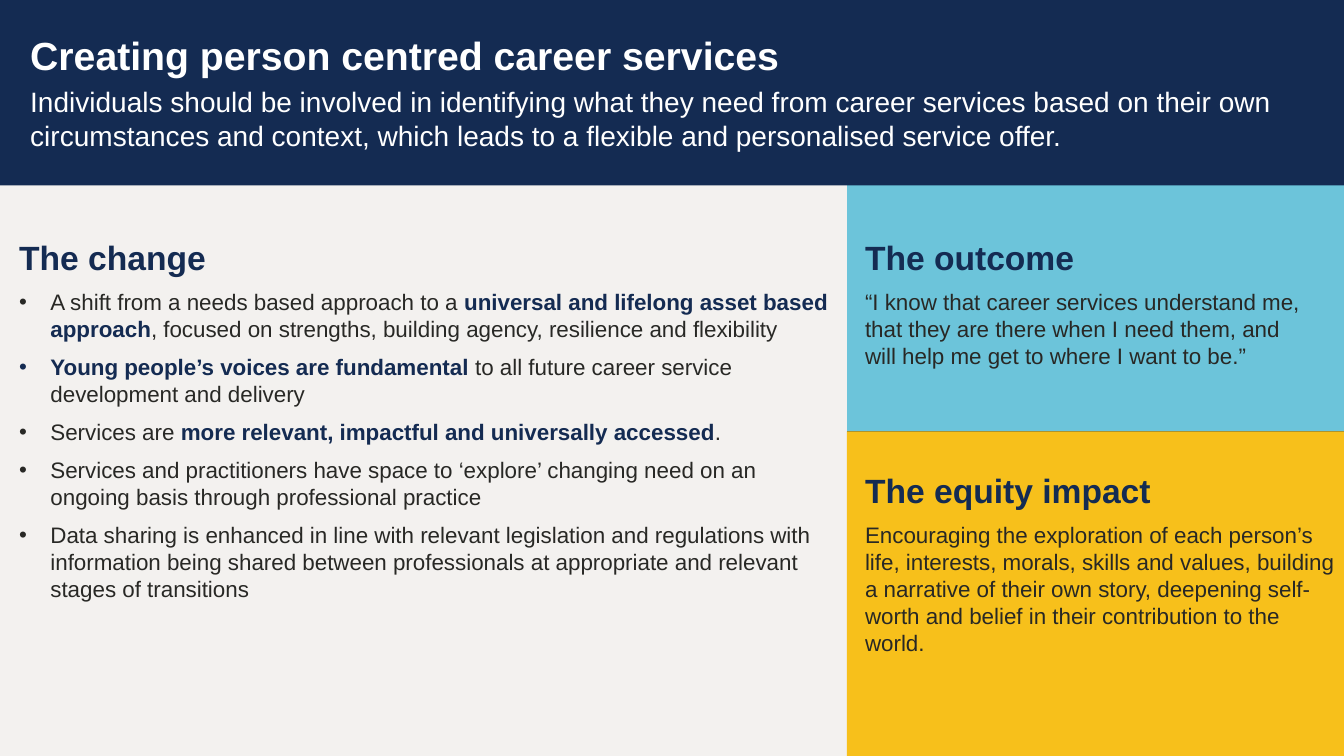
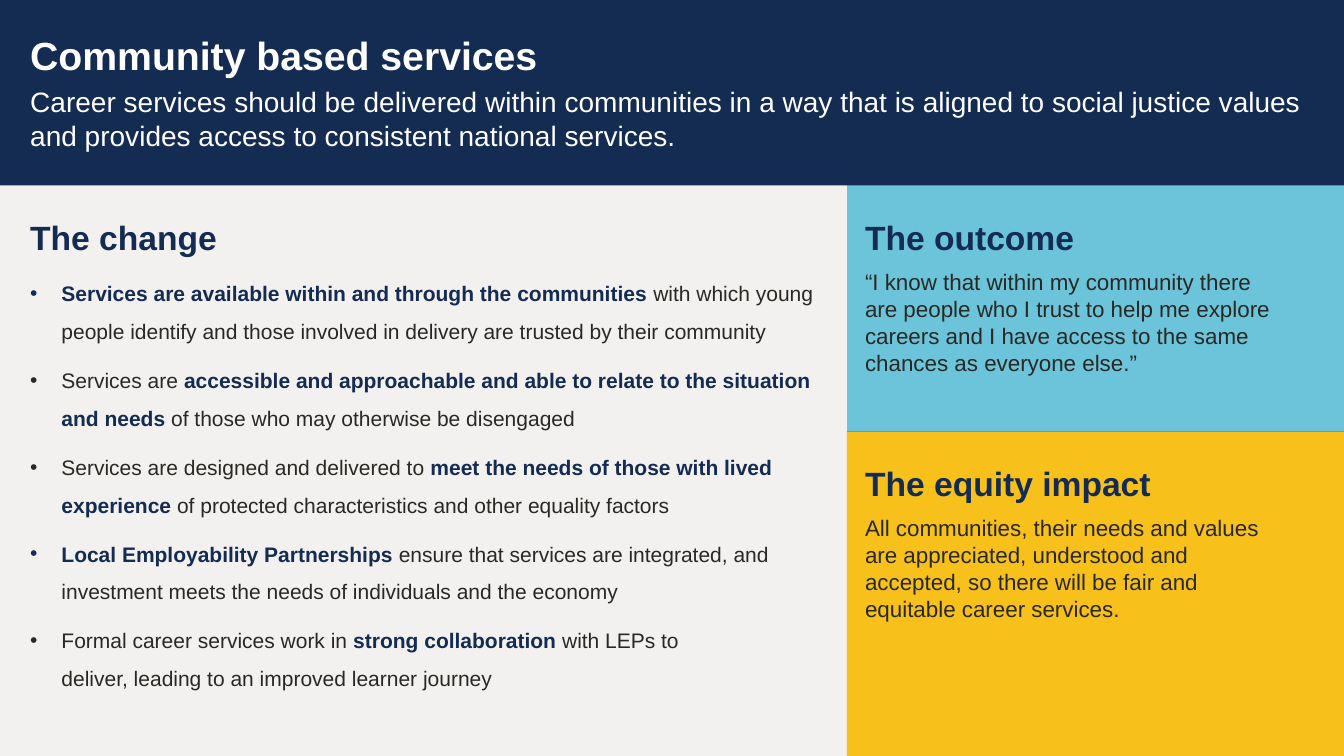
from lxml.etree import SubElement
from pptx import Presentation
from pptx.dml.color import RGBColor
from pptx.enum.shapes import MSO_SHAPE
from pptx.oxml.ns import qn
from pptx.util import Inches, Pt

NAVY = RGBColor(0x14, 0x2B, 0x52)
SKY = RGBColor(0x6C, 0xC4, 0xDA)
STONE = RGBColor(0xF3, 0xF1, 0xEF)
GOLD = RGBColor(0xF7, 0xC0, 0x1B)
INK = RGBColor(0x28, 0x28, 0x25)
WHITE = RGBColor(0xFF, 0xFF, 0xFF)
BLACK = RGBColor(0, 0, 0)

WIDTH, HEIGHT = 13.33, 7.5
SPLIT, BAND, OUTCOME_TOP, EQUITY_TOP = 8.4, 1.84, 1.71, 4.28
SIDE_LEFT, SIDE_HEIGHT = 8.58, 1.53
INDENT = Inches(0.31)

PANELS = [
    (SKY, SPLIT, OUTCOME_TOP, WIDTH - SPLIT, EQUITY_TOP - OUTCOME_TOP),
    (STONE, 0, OUTCOME_TOP, SPLIT, HEIGHT - OUTCOME_TOP),
    (GOLD, SPLIT, EQUITY_TOP, WIDTH - SPLIT, HEIGHT - EQUITY_TOP),
    (NAVY, 0, 0, WIDTH, BAND),
]

SLIDES = [
    {
        "title": "Creating person centred career services",
        "summary": "Individuals should be involved in identifying what they need from career services "
                   "based on their own circumstances and context, which leads to a flexible and "
                   "personalised service offer.",
        "change_box": (0.19, 2.15, 8.12, 4.11),
        "bullet_size": 16,
        "bullet_spacing": None,
        "side_width": 4.66,
        "equity_top": 4.46,
        "change": [
            "A shift from a needs based approach to a *universal and lifelong asset based approach*, "
            "focused on strengths, building agency, resilience and flexibility",
            "*Young people’s voices are fundamental *to all future career service development and delivery",
            "Services are *more relevant, impactful and universally accessed*.",
            "Services and practitioners have space to ‘explore’ changing need on an ongoing basis "
            "through professional practice",
            "Data sharing is enhanced in line with relevant legislation and regulations with information "
            "being shared between professionals at appropriate and relevant stages of transitions",
        ],
        "outcome": "“I know that career services understand me, that they are there when I need them, and \n"
                   "will help me get to where I want to be.”",
        "equity": "Encouraging the exploration of each person’s life, interests, morals, skills and values, "
                  "building a narrative of their own story, deepening self-worth and belief in their "
                  "contribution to the world.",
    },
    {
        "title": "Community based services",
        "summary": "Career services should be delivered within communities in a way that is aligned to "
                   "social justice values and provides access to consistent national services.",
        "change_box": (0.3, 1.95, 7.8, 4.11),
        "bullet_size": 15,
        "bullet_spacing": 1.5,
        "side_width": 4.07,
        "equity_top": 4.39,
        "change": [
            "*Services are available within and through the communities *with which young people identify "
            "and those involved in delivery are trusted by their community",
            "Services are *accessible and approachable and able to relate to the situation and needs *"
            "of those who may otherwise be disengaged",
            "Services are designed and delivered to *meet the needs of those with lived experience *"
            "of protected characteristics and other equality factors",
            "*Local Employability Partnerships *ensure that services are integrated, and investment meets "
            "the needs of individuals and the economy",
            "Formal career services work in *strong collaboration *with LEPs to \n"
            "deliver, leading to an improved learner journey",
        ],
        "outcome": "“I know that within my community there are people who I trust to help me explore "
                   "careers and I have access to the same chances as everyone else.”",
        "equity": "All communities, their needs and values are appreciated, understood and accepted, "
                  "so there will be fair and equitable career services.",
    },
]


class Deck:
    """Hold the shared style and the slide being built."""

    font_name = "Arial"

    def __init__(self):
        self.presentation = Presentation()
        self.presentation.slide_width = Inches(WIDTH)
        self.presentation.slide_height = Inches(HEIGHT)
        self.slide = None

    def add_slide(self):
        self.slide = self.presentation.slides.add_slide(self.presentation.slide_layouts[6])
        fill = self.slide.background.fill
        fill.solid()
        fill.fore_color.rgb = BLACK
        for panel in PANELS:
            self.add_panel(*panel)

    def add_panel(self, color, *box):
        shape = self.slide.shapes.add_shape(MSO_SHAPE.RECTANGLE, *map(Inches, box))
        shape.shadow.inherit = False
        shape.fill.solid()
        shape.fill.fore_color.rgb = color
        shape.line.fill.background()

    def add_text(self, box, *paragraphs):
        frame = self.slide.shapes.add_textbox(*map(Inches, box)).text_frame
        frame_format = {"margin_left": 0, "margin_right": 0, "margin_top": 0,
                        "margin_bottom": 0, "word_wrap": True}
        for name, value in frame_format.items():
            setattr(frame, name, value)
        for index, content in enumerate(paragraphs):
            paragraph = frame.add_paragraph() if index else frame.paragraphs[0]
            self.fill_paragraph(paragraph, **content)

    def fill_paragraph(self, paragraph, text, size, color=INK, bold=False, spacing=None, bullet=False):
        for name, value in {"line_spacing": spacing, "space_after": Pt(8)}.items():
            setattr(paragraph, name, value)
        if bullet:
            self.add_bullet(paragraph)
        for index, part in enumerate(text.split("*")):
            strong = index % 2 == 1
            for line_index, line in enumerate(part.split("\n")):
                if line_index:
                    paragraph.add_line_break()
                if line:
                    run = paragraph.add_run()
                    run.text = line
                    font_format = {"name": self.font_name, "size": Pt(size), "bold": bold or strong}
                    for name, value in font_format.items():
                        setattr(run.font, name, value)
                    run.font.color.rgb = NAVY if strong else color

    def add_bullet(self, paragraph):
        properties = paragraph._p.get_or_add_pPr()
        properties.set("marL", str(int(INDENT)))
        properties.set("indent", str(-int(INDENT)))
        SubElement(properties, qn("a:buFont"), typeface=self.font_name)
        SubElement(properties, qn("a:buChar"), char="•")

    def add_section(self, box, heading, *paragraphs):
        title = {"text": heading, "size": 24, "color": NAVY, "bold": True, "spacing": 1.5}
        self.add_text(box, title, *paragraphs)

    def add_header(self, title, summary):
        self.add_text((0.3, 0.31, 12.74, 0.66), {"text": title, "size": 28, "color": WHITE, "bold": True})
        self.add_text((0.3, 0.84, 12.64, 0.84), {"text": summary, "size": 20, "color": WHITE})


def main():
    deck = Deck()
    for content in SLIDES:
        deck.add_slide()
        deck.add_header(content["title"], content["summary"])
        bullets = [{"text": text, "size": content["bullet_size"], "spacing": content["bullet_spacing"],
                    "bullet": True} for text in content["change"]]
        deck.add_section(content["change_box"], "The change", *bullets)
        sides = [("The outcome", content["change_box"][1], content["outcome"]),
                 ("The equity impact", content["equity_top"], content["equity"])]
        for heading, top, text in sides:
            deck.add_section((SIDE_LEFT, top, content["side_width"], SIDE_HEIGHT), heading,
                             {"text": text, "size": 16})
    deck.presentation.save("out.pptx")


if __name__ == "__main__":
    main()
